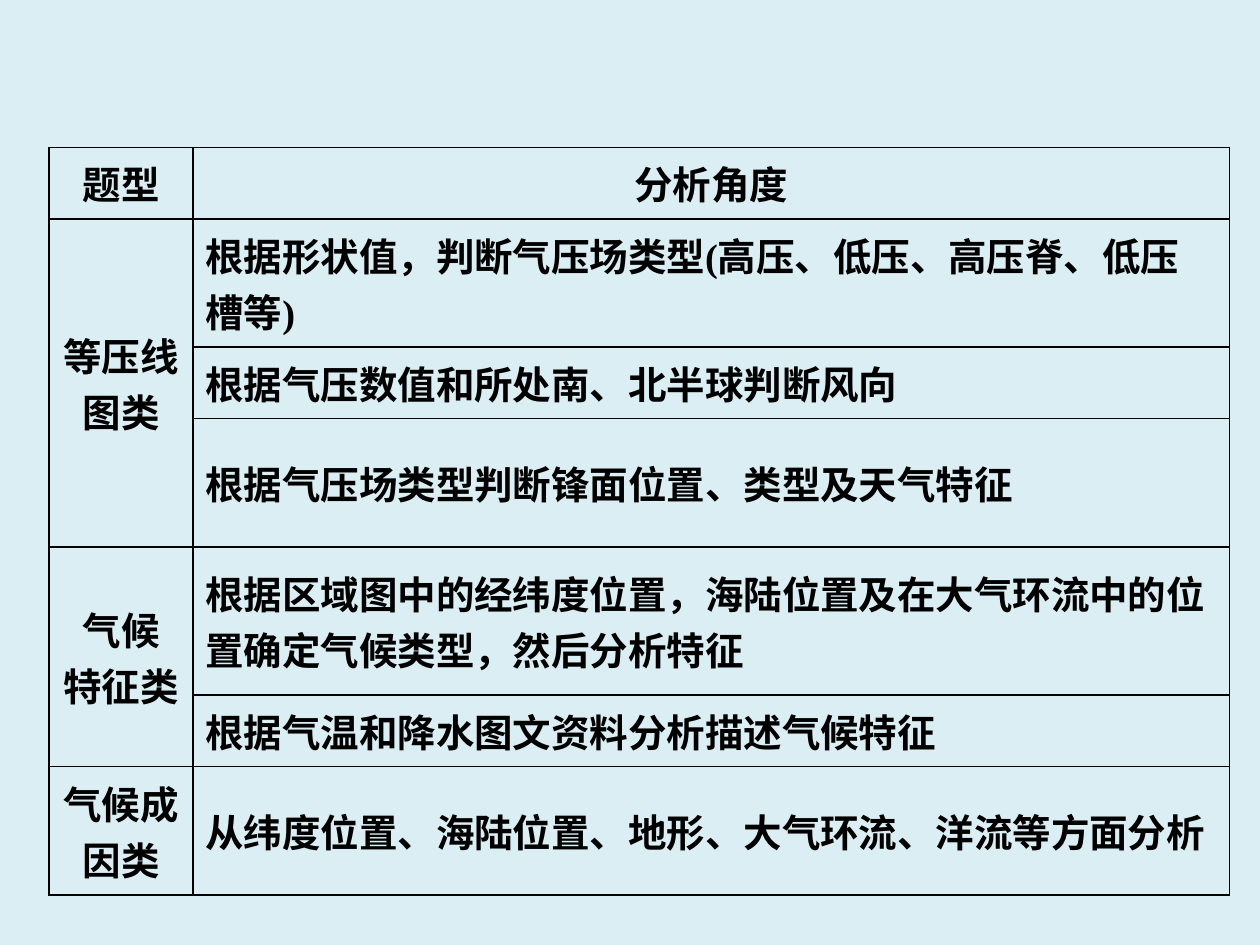
import pptx
import pptx.util
import pptx.dml.color
import pptx.enum.text
import pptx.oxml
import pptx.oxml.ns

Cm = pptx.util.Cm
RGB = pptx.dml.color.RGBColor
ALIGN = pptx.enum.text.PP_ALIGN
ANCHOR = pptx.enum.text.MSO_ANCHOR

BLACK = RGB(0x00, 0x00, 0x00)
PALE = RGB(0xDB, 0xEE, 0xF4)

FONT = {"name": "Times New Roman", "size": pptx.util.Pt(22), "bold": True}
PLAIN = {"first_row": False, "horz_banding": False}

WIDTHS = [2.9, 20.9]
LOW, MID, HIGH = 1.44, 2.59, 2.98
HEAD = ("题型", "分析角度")
GROUPS = [
    ("等压线\n图类", [
        (MID, "根据形状值，判断气压场类型(高压、低压、高压脊、低压槽等)"),
        (LOW, "根据气压数值和所处南、北半球判断风向"),
        (MID, "根据气压场类型判断锋面位置、类型及天气特征"),
    ]),
    ("气候\n特征类", [
        (HIGH, "根据区域图中的经纬度位置，海陆位置及在大气环流中的位置确定气候类型，然后分析特征"),
        (LOW, "根据气温和降水图文资料分析描述气候特征"),
    ]),
    ("气候成\n因类", [
        (MID, "从纬度位置、海陆位置、地形、大气环流、洋流等方面分析"),
    ]),
]


def apply(item, values):
    for key, value in values.items():
        setattr(item, key, value)


def border(cell):
    props = cell._tc.get_or_add_tcPr()
    space = pptx.oxml.ns.nsdecls("a")
    for index, side in enumerate("LRTB"):
        line = pptx.oxml.parse_xml(
            f'<a:ln{side} {space} w="12700"><a:solidFill>'
            f'<a:srgbClr val="{BLACK}"/></a:solidFill></a:ln{side}>')
        props.insert(index, line)


def write(cell, text, align):
    cell.text = text
    cell.vertical_anchor = ANCHOR.MIDDLE
    for para in cell.text_frame.paragraphs:
        para.alignment = align
        for run in para.runs:
            apply(run.font, FONT)
            run.font.color.rgb = BLACK


def add_grid(slide):
    rows = [row for _, group in GROUPS for row in group]
    tall = [LOW] + [height for height, _ in rows]
    frame = slide.shapes.add_table(
        len(tall), len(WIDTHS), Cm(0.99), Cm(2.97),
        Cm(sum(WIDTHS)), Cm(sum(tall)))
    table = frame.table
    apply(table, PLAIN)
    for col, width in zip(table.columns, WIDTHS):
        col.width = Cm(width)
    for row, height in zip(table.rows, tall):
        row.height = Cm(height)
    for cell in table.iter_cells():
        cell.fill.background()
        border(cell)
    return table


def fill_grid(table):
    for col, text in enumerate(HEAD):
        write(table.cell(0, col), text, ALIGN.CENTER)
    top = 1
    for label, group in GROUPS:
        first = table.cell(top, 0)
        if len(group) > 1:
            first.merge(table.cell(top + len(group) - 1, 0))
        write(first, label, ALIGN.CENTER)
        for row, (_, text) in enumerate(group, top):
            write(table.cell(row, 1), text, ALIGN.LEFT)
        top += len(group)


def main():
    deck = pptx.Presentation()
    apply(deck, {"slide_width": Cm(25.4), "slide_height": Cm(19.05)})
    slide = deck.slides.add_slide(deck.slide_layouts[6])
    back = slide.background.fill
    back.solid()
    back.fore_color.rgb = PALE
    fill_grid(add_grid(slide))
    deck.save("out.pptx")


if __name__ == "__main__":
    main()
